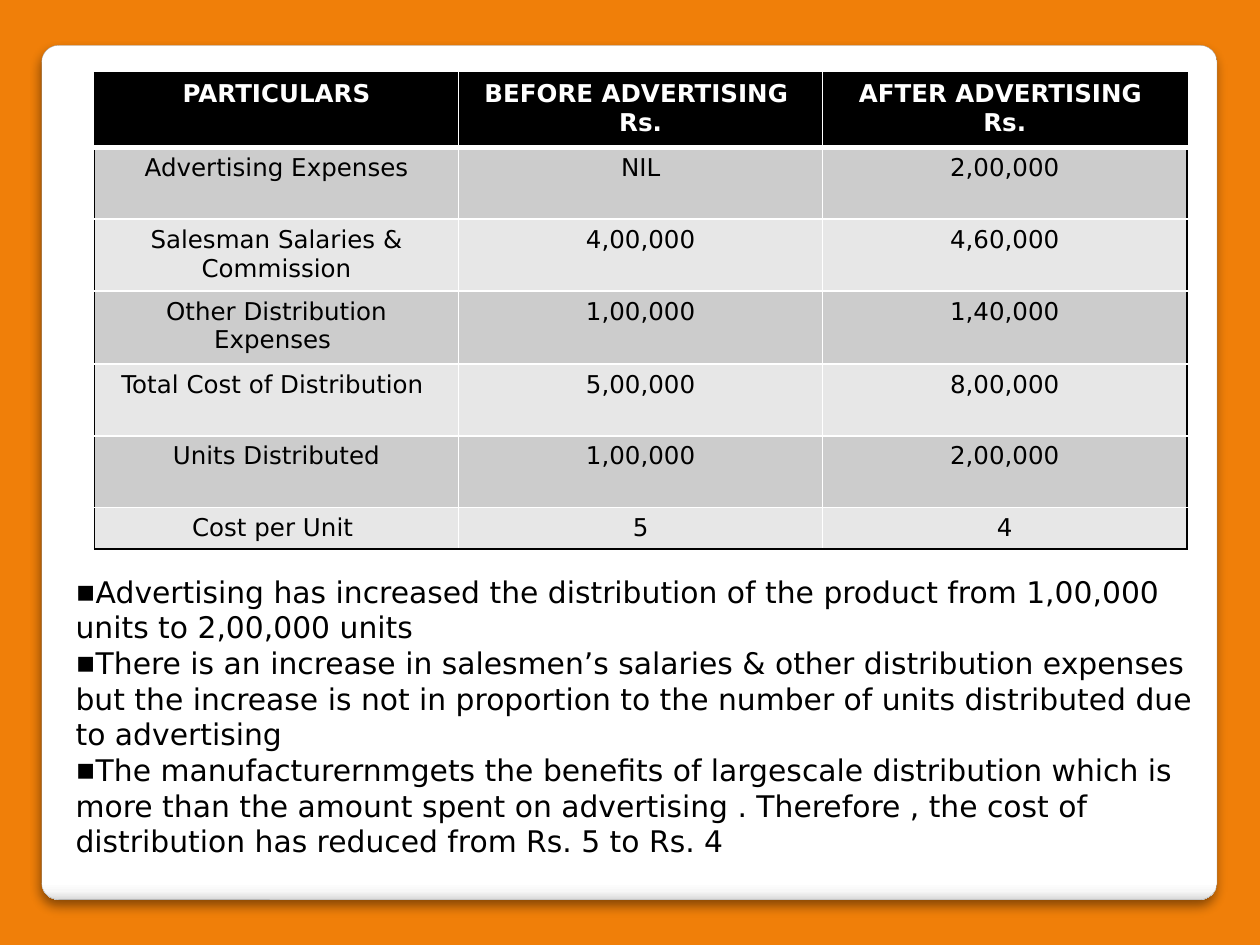
from typing import NamedTuple

import lxml.etree
import pptx
import pptx.dml.color
import pptx.enum.shapes
import pptx.enum.text
import pptx.oxml
import pptx.oxml.ns
import pptx.util

Inches, Pt = pptx.util.Inches, pptx.util.Pt
RGBColor = pptx.dml.color.RGBColor
qn = pptx.oxml.ns.qn

FONT = "DejaVu Sans"
ORANGE = RGBColor(0xF0, 0x7F, 0x09)
BLACK = RGBColor(0, 0, 0)
WHITE = RGBColor(0xFF, 0xFF, 0xFF)
PANEL_EDGE = RGBColor(0xA4, 0xA4, 0xA4)
PANEL_LOW = RGBColor(0xF7, 0xF7, 0xF7)
PANEL_BOTTOM = RGBColor(0xDA, 0xDA, 0xDA)
DARK_BAND = RGBColor(0xCC, 0xCC, 0xCC)
LIGHT_BAND = RGBColor(0xE7, 0xE7, 0xE7)


class CostRow(NamedTuple):
    particulars: str
    before: str
    after: str
    height: float = 0.57


COST_ROWS = [
    CostRow("PARTICULARS", "BEFORE ADVERTISING \nRs.", "AFTER ADVERTISING \nRs.", 0.59),
    CostRow("Advertising Expenses", "NIL", "2,00,000"),
    CostRow("Salesman Salaries & Commission", "4,00,000", "4,60,000"),
    CostRow("Other Distribution Expenses ", "1,00,000", "1,40,000", 0.58),
    CostRow("Total Cost of Distribution ", "5,00,000", "8,00,000"),
    CostRow("Units Distributed", "1,00,000", "2,00,000"),
    CostRow("Cost per Unit ", "5", "4", 0.33),
]
COLUMN_WIDTH = 2.89

CONCLUSIONS = [
    "Advertising has increased the distribution of the product from 1,00,000 units "
    "to 2,00,000 units",
    "There is an increase in salesmen’s salaries & other distribution expenses but the "
    "increase is not in proportion to the number of units distributed due to advertising",
    "The manufacturernmgets the benefits of largescale distribution which is more than "
    "the amount spent on advertising . Therefore , the cost of distribution has reduced "
    "from Rs. 5 to Rs. 4",
]


def add_color(parent, color: RGBColor):
    return lxml.etree.SubElement(parent, qn("a:srgbClr"), val=str(color))


def draw_panel(slide) -> None:
    panel = slide.shapes.add_shape(
        pptx.enum.shapes.MSO_SHAPE.ROUNDED_RECTANGLE,
        Inches(0.33), Inches(0.36), Inches(9.33), Inches(6.78))
    panel.adjustments[0] = 0.02
    panel.line.color.rgb = PANEL_EDGE
    panel.line.width = Pt(0.16)

    # White face that darkens at the bottom edge
    panel.fill.gradient()
    panel.fill.gradient_angle = 270
    stops = panel.element.spPr.find(".//" + qn("a:gsLst"))
    for stop in list(stops):
        stops.remove(stop)
    for percent, color in [(0, WHITE), (98, WHITE), (99, PANEL_LOW), (100, PANEL_BOTTOM)]:
        add_color(lxml.etree.SubElement(stops, qn("a:gs"), pos=str(percent * 1000)), color)

    # Soft shadow below
    panel.shadow.inherit = False
    effects = panel.element.spPr.find(qn("a:effectLst"))
    shadow = lxml.etree.SubElement(
        effects, qn("a:outerShdw"), blurRad=str(Pt(6)), dist=str(Pt(4)),
        dir="5400000", algn="t", rotWithShape="0")
    lxml.etree.SubElement(add_color(shadow, BLACK), qn("a:alpha"), val="44000")


def set_border(cell, side: str, color: RGBColor, width: float) -> None:
    edge = lxml.etree.SubElement(
        cell._tc.get_or_add_tcPr(), qn(f"a:ln{side}"), w=str(Pt(width)))
    add_color(lxml.etree.SubElement(edge, qn("a:solidFill")), color)


def format_cell(cell, row: int, column: int) -> None:
    header, last_row = row == 0, row == len(COST_ROWS) - 1
    set_border(cell, "L", BLACK if column == 0 else WHITE, 1)
    set_border(cell, "R", BLACK if column == 2 else WHITE, 1)
    set_border(cell, "T", BLACK if header else WHITE, 3 if row == 1 else 1)
    set_border(cell, "B", BLACK if last_row else WHITE, 3 if header else 1)
    cell.fill.solid()
    cell.fill.fore_color.rgb = BLACK if header else DARK_BAND if row % 2 else LIGHT_BAND
    for paragraph in cell.text_frame.paragraphs:
        paragraph.alignment = pptx.enum.text.PP_ALIGN.CENTER
        for run in paragraph.runs:
            run.font.name = FONT
            run.font.size = Pt(14)
            run.font.bold = header
            run.font.color.rgb = WHITE if header else BLACK


def draw_cost_table(slide) -> None:
    costs = slide.shapes.add_table(
        len(COST_ROWS), 3, Inches(0.75), Inches(0.58), Inches(3 * COLUMN_WIDTH),
        Inches(sum(cost.height for cost in COST_ROWS))).table
    for column in costs.columns:
        column.width = Inches(COLUMN_WIDTH)
    for row, cost in enumerate(COST_ROWS):
        costs.rows[row].height = Inches(cost.height)
        for column, entry in enumerate((cost.particulars, cost.before, cost.after)):
            cell = costs.cell(row, column)
            cell.text_frame.text = entry
            format_cell(cell, row, column)


def fill_conclusions(conclusions) -> None:
    conclusions.left, conclusions.top = Inches(0.5), Inches(4.5)
    conclusions.width, conclusions.height = Inches(9.08), Inches(2.66)
    frame = conclusions.text_frame
    frame.text = "\n".join(CONCLUSIONS)
    frame.word_wrap = True
    frame.auto_size = pptx.enum.text.MSO_AUTO_SIZE.SHAPE_TO_FIT_TEXT
    for paragraph in frame.paragraphs:
        properties = paragraph._p.get_or_add_pPr()
        properties.set("marL", "0")
        properties.set("indent", "0")
        lxml.etree.SubElement(properties, qn("a:buFont"), typeface=FONT)
        lxml.etree.SubElement(properties, qn("a:buChar"), char="▪")
        paragraph.space_before = Pt(0)
        paragraph.line_spacing = Pt(20.4)
        for run in paragraph.runs:
            run.font.name = FONT
            run.font.size = Pt(17)
            run.font.color.rgb = BLACK


def main() -> None:
    presentation = pptx.Presentation()
    presentation.slide_width, presentation.slide_height = Inches(10), Inches(7.5)
    slide = presentation.slides.add_slide(presentation.slide_layouts[1])
    slide.background.fill.solid()
    slide.background.fill.fore_color.rgb = ORANGE

    # The slide has no title
    title = slide.shapes.title.element
    title.getparent().remove(title)

    draw_panel(slide)
    draw_cost_table(slide)

    # The list lies in front of the panel
    conclusions = slide.placeholders[1]
    conclusions.element.getparent().append(conclusions.element)
    fill_conclusions(conclusions)

    presentation.save("out.pptx")


if __name__ == "__main__":
    main()
